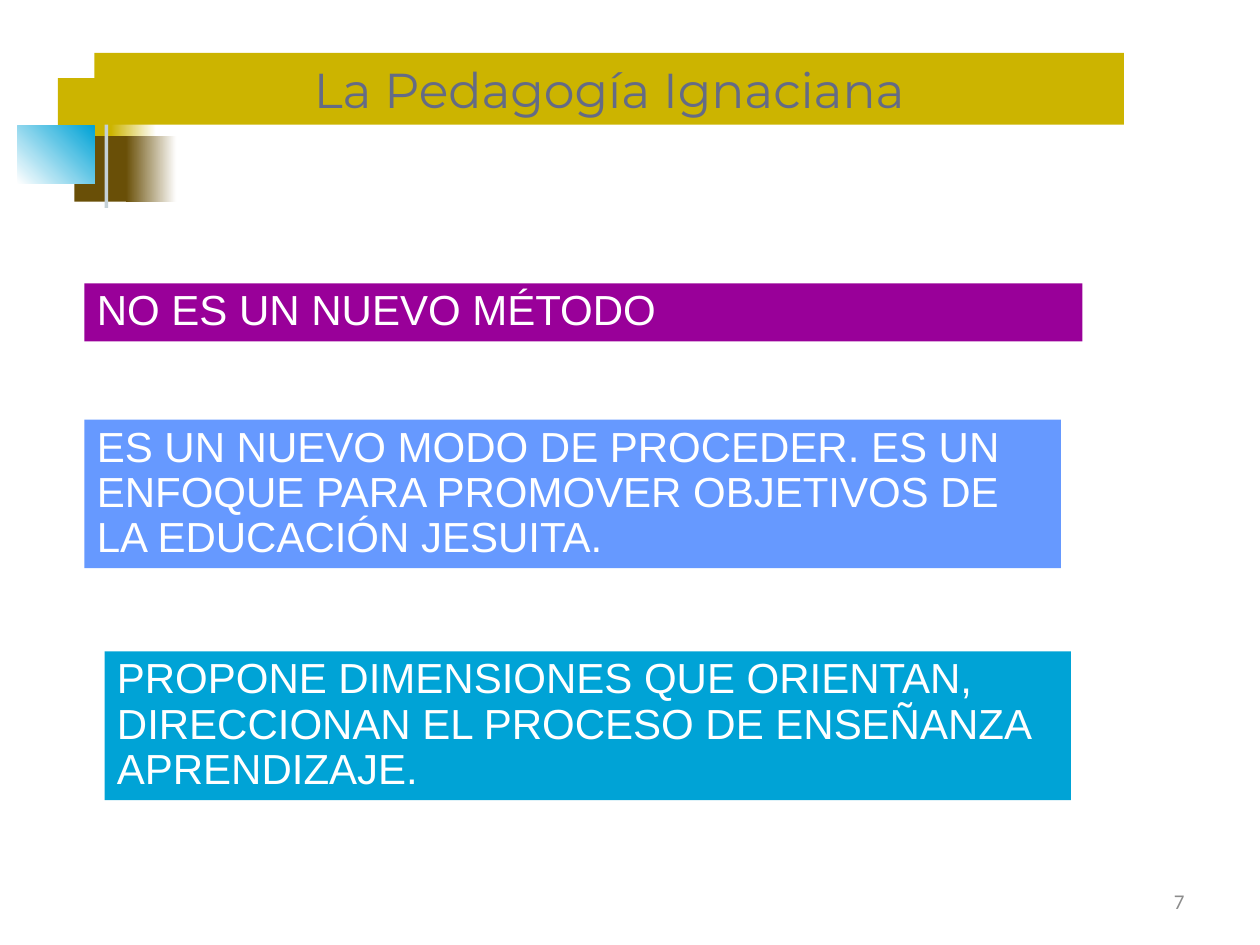
from pptx import Presentation
from pptx.dml.color import RGBColor
from pptx.enum.shapes import MSO_SHAPE
from pptx.enum.text import MSO_ANCHOR, PP_ALIGN
from pptx.util import Inches, Pt

RECT = MSO_SHAPE.RECTANGLE
TOP, MIDDLE, BOTTOM = MSO_ANCHOR.TOP, MSO_ANCHOR.MIDDLE, MSO_ANCHOR.BOTTOM
LEFT, CENTER, RIGHT = PP_ALIGN.LEFT, PP_ALIGN.CENTER, PP_ALIGN.RIGHT

WHITE = RGBColor(0xFF, 0xFF, 0xFF)
GOLD = RGBColor(0xCC, 0xB4, 0x00)
BROWN = RGBColor(0x69, 0x4F, 0x07)
CYAN = RGBColor(0x00, 0xA3, 0xD6)
SILVER = RGBColor(0xC5, 0xD1, 0xD7)
SLATE = RGBColor(0x64, 0x6B, 0x86)
GRAY = RGBColor(0x8C, 0x8C, 0x8C)
PURPLE = RGBColor(0x99, 0x00, 0x99)
BLUE = RGBColor(0x66, 0x99, 0xFF)

BLOCKS = [
    ((0.46, 0.62, 0.48, 0.52), [GOLD], 0),
    ((0.88, 0.62, 0.36, 0.52), [GOLD, WHITE], 0),
    ((0.59, 1.08, 0.46, 0.52), [BROWN], 0),
    ((1, 1.08, 0.4, 0.52), [BROWN, WHITE], 0),
    ((0.14, 1, 0.61, 0.46), [WHITE, CYAN], 45),
    ((0.83, 0.5, 0.03, 1.15), [SILVER], 0),
]

POINTS = [
    ((0.67, 2.25, 7.92, 0.46), PURPLE, "NO ES UN NUEVO MÉTODO"),
    ((0.67, 3.33, 7.75, 1.18), BLUE,
     "ES UN NUEVO MODO DE PROCEDER. ES UN ENFOQUE PARA PROMOVER "
     "OBJETIVOS DE LA EDUCACIÓN JESUITA."),
    ((0.83, 5.17, 7.67, 1.18), CYAN,
     "PROPONE DIMENSIONES QUE ORIENTAN, DIRECCIONAN EL PROCESO DE "
     "ENSEÑANZA APRENDIZAJE."),
]


def add_block(slide, box, colors, angle=0):
    shape = slide.shapes.add_shape(RECT, *map(Inches, box))
    shape.shadow.inherit = False
    shape.line.fill.background()
    if len(colors) == 1:
        shape.fill.solid()
        shape.fill.fore_color.rgb = colors[0]
    else:
        shape.fill.gradient()
        shape.fill.gradient_angle = angle
        for stop, color in zip(shape.fill.gradient_stops, colors):
            stop.color.rgb = color
    return shape


def set_text(shape, text, font, size, color, align, anchor):
    frame = shape.text_frame
    frame.text = text
    frame.word_wrap = True
    frame.vertical_anchor = anchor
    para = frame.paragraphs[0]
    para.alignment = align
    run = para.runs[0]
    run.font.name = font
    run.font.size = Pt(size)
    run.font.color.rgb = color
    return para


def add_point(slide, box, color, text):
    shape = add_block(slide, box, [color])
    para = set_text(shape, text, "Arial", 24, WHITE, LEFT, TOP)
    para.line_spacing = 0.9
    para.space_before = Pt(4.8)


def add_title(slide, text):
    shape = add_block(slide, (0.75, 0.42, 8.17, 0.57), [GOLD])
    set_text(shape, text, "Montserrat", 28, SLATE, CENTER, BOTTOM)


def add_number(slide, text):
    box = slide.shapes.add_textbox(*map(Inches, (7.17, 6.95, 2.33, 0.4)))
    set_text(box, text, "Calibri", 12, GRAY, RIGHT, MIDDLE)


def main():
    deck = Presentation()
    deck.slide_width, deck.slide_height = Inches(10), Inches(7.5)
    slide = deck.slides.add_slide(deck.slide_layouts[6])
    for block in BLOCKS:
        add_block(slide, *block)
    add_number(slide, "7")
    add_title(slide, "La Pedagogía Ignaciana")
    for point in POINTS:
        add_point(slide, *point)
    deck.save("out.pptx")


if __name__ == "__main__":
    main()
